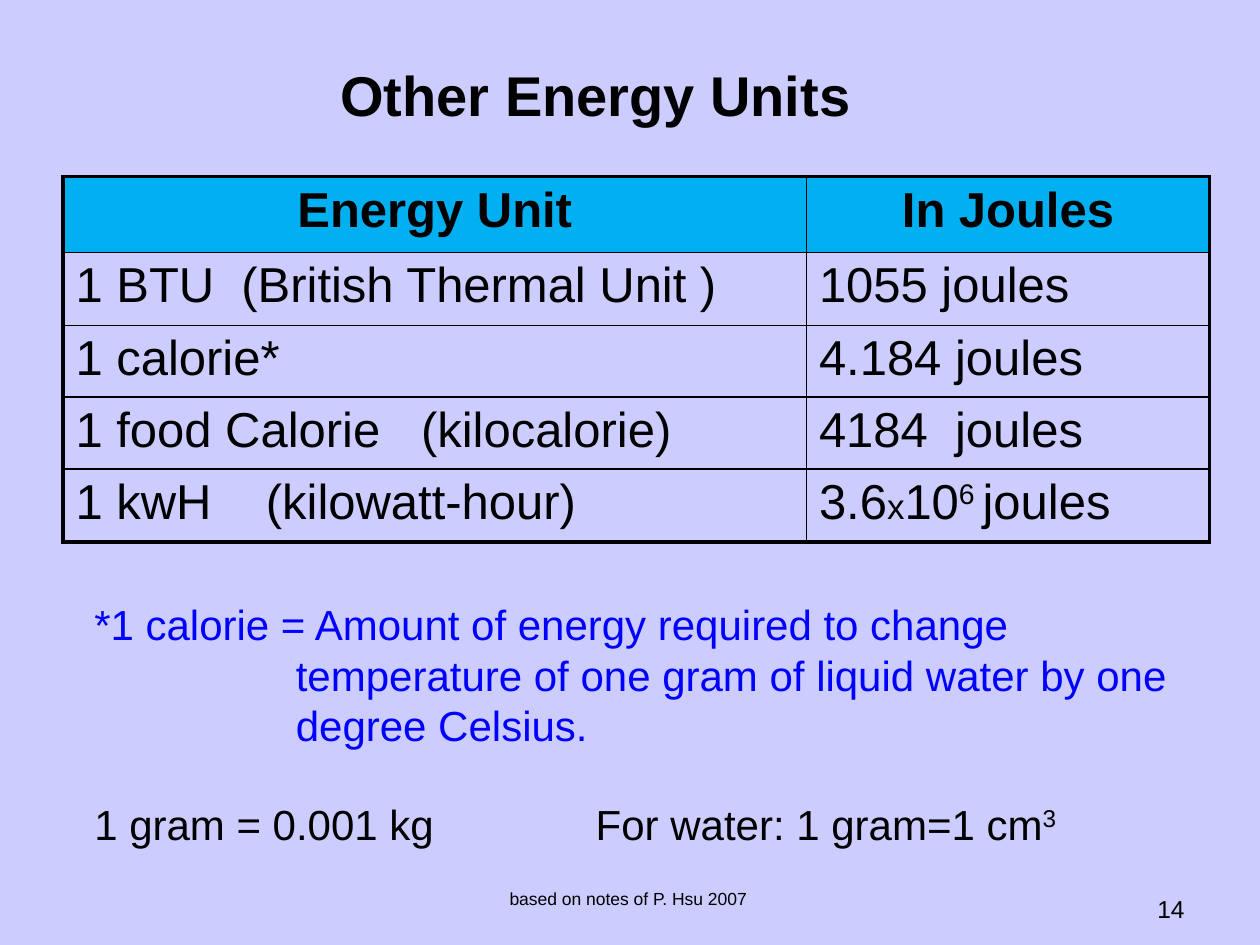
from dataclasses import dataclass

from pptx import Presentation
from pptx.dml.color import RGBColor
from pptx.enum.text import MSO_ANCHOR, MSO_AUTO_SIZE, PP_ALIGN
from pptx.oxml.ns import qn
from pptx.util import Inches, Pt
from lxml.etree import SubElement


@dataclass(frozen=True)
class Theme:
    font: str = "Arial"
    background: str = "CCCCFF"
    header: str = "00B0F0"
    ink: str = "000000"
    note: str = "0000FF"
    title_size: float = 32
    table_size: float = 28
    times_size: float = 20
    note_size: float = 24
    number_size: float = 14
    credit_size: float = 10
    outer_line: float = 2.25
    inner_line: float = 1


@dataclass(frozen=True)
class Box:
    """A place on the slide, in shares of its width and height."""
    left: float
    top: float
    width: float
    height: float

    def lengths(self) -> tuple:
        return (int(WIDTH * self.left), int(HEIGHT * self.top),
                int(WIDTH * self.width), int(HEIGHT * self.height))


@dataclass(frozen=True)
class Span:
    text: str
    size: float = 0
    raised: bool = False


@dataclass(frozen=True)
class Style:
    size: float
    color: str = Theme.ink
    bold: bool = False
    align: PP_ALIGN = PP_ALIGN.LEFT


THEME = Theme()
WIDTH, HEIGHT = Inches(10), Inches(7.5)

TITLE_BOX = Box(0.26, 0.057, 0.547, 0.085)
TABLE_BOX = Box(0.05, 0.187, 0.91, 0.387)
NOTES_BOX = Box(0.065, 0.627, 0.9, 0.283)
CREDIT_BOX = Box(0.34, 0.933, 0.317, 0.05)
NUMBER_BOX = Box(0.717, 0.94, 0.233, 0.04)

COLUMN_WIDTHS = (5.9, 3.2)
ROW_HEIGHTS = (0.6, 0.58, 0.57, 0.57, 0.58)
UNITS = (
    ((Span("Energy Unit"),), (Span("In Joules"),)),
    ((Span("1 BTU  (British Thermal Unit )"),), (Span("1055 joules"),)),
    ((Span("1 calorie*"),), (Span("4.184 joules"),)),
    ((Span("1 food Calorie   (kilocalorie)"),), (Span("4184  joules"),)),
    ((Span("1 kwH    (kilowatt-hour)"),),
     (Span("3.6"), Span("x", THEME.times_size), Span("10"),
      Span("6 ", raised=True), Span("joules"))),
)


def write(paragraph, spans: tuple, style: Style) -> None:
    paragraph.alignment = style.align
    for span in spans:
        run = paragraph.add_run()
        run.text = span.text
        font = run.font
        font.name, font.bold = THEME.font, style.bold
        font.size = Pt(span.size or style.size)
        font.color.rgb = RGBColor.from_string(style.color)
        if span.raised:
            run._r.get_or_add_rPr().set("baseline", "30000")


def add_text_box(slide, box: Box, text: str, style: Style):
    frame = slide.shapes.add_textbox(*box.lengths()).text_frame
    frame.word_wrap = True
    write(frame.paragraphs[0], (Span(text),), style)
    return frame


def set_borders(cell, row: int, column: int) -> None:
    """Draw heavy lines on the table's outside and thin ones within."""
    outside = {"a:lnL": column == 0, "a:lnR": column == len(COLUMN_WIDTHS) - 1,
               "a:lnT": row == 0, "a:lnB": row == len(ROW_HEIGHTS) - 1}
    properties = cell._tc.get_or_add_tcPr()
    for position, (tag, heavy) in enumerate(outside.items()):
        line = SubElement(properties, qn(tag))
        width = THEME.outer_line if heavy else THEME.inner_line
        line.set("w", str(Pt(width)))
        fill = SubElement(line, qn("a:solidFill"))
        SubElement(fill, qn("a:srgbClr")).set("val", THEME.ink)
        properties.insert(position, line)


def add_unit_table(slide) -> None:
    table = slide.shapes.add_table(len(ROW_HEIGHTS), len(COLUMN_WIDTHS),
                                   *TABLE_BOX.lengths()).table
    table.horz_banding = False
    for column, width in zip(table.columns, COLUMN_WIDTHS):
        column.width = Inches(width)
    for row, height in zip(table.rows, ROW_HEIGHTS):
        row.height = Inches(height)
    heading = Style(THEME.table_size, bold=True, align=PP_ALIGN.CENTER)
    body = Style(THEME.table_size)
    for r, unit in enumerate(UNITS):
        for c, spans in enumerate(unit):
            cell = table.cell(r, c)
            if r == 0:
                cell.fill.solid()
                cell.fill.fore_color.rgb = RGBColor.from_string(THEME.header)
            else:
                cell.fill.background()
            set_borders(cell, r, c)
            write(cell.text_frame.paragraphs[0], spans,
                  heading if r == 0 else body)


def add_title(slide) -> None:
    title = slide.shapes.title
    title.left, title.top, title.width, title.height = TITLE_BOX.lengths()
    frame = title.text_frame
    frame.auto_size = MSO_AUTO_SIZE.NONE
    frame.vertical_anchor = MSO_ANCHOR.TOP
    write(frame.paragraphs[0], (Span("Other Energy Units"),),
          Style(THEME.title_size, bold=True))


def add_notes(slide) -> None:
    frame = add_text_box(
        slide, NOTES_BOX,
        "*1 calorie = Amount of energy required to change temperature "
        "of one gram of liquid water by one degree Celsius.",
        Style(THEME.note_size, THEME.note))
    hanging = frame.paragraphs[0]._p.get_or_add_pPr()
    hanging.set("marL", str(Inches(1.6)))
    hanging.set("indent", str(-Inches(1.6)))

    water = frame.add_paragraph()
    water.space_before = Pt(THEME.note_size * 1.15)
    write(water, (Span("1 gram = 0.001 kg\tFor water: 1 gram=1 cm"),
                  Span("3", raised=True)), Style(THEME.note_size))
    stops = SubElement(water._p.get_or_add_pPr(), qn("a:tabLst"))
    stop = SubElement(stops, qn("a:tab"))
    stop.set("pos", str(Inches(3.98)))
    stop.set("algn", "l")


def main() -> None:
    deck = Presentation()
    deck.slide_width, deck.slide_height = WIDTH, HEIGHT
    slide = deck.slides.add_slide(deck.slide_layouts.get_by_name("Title Only"))
    slide.background.fill.solid()
    slide.background.fill.fore_color.rgb = RGBColor.from_string(THEME.background)
    add_title(slide)
    add_unit_table(slide)
    add_notes(slide)
    add_text_box(slide, CREDIT_BOX, "based on notes of P. Hsu 2007",
                 Style(THEME.credit_size, align=PP_ALIGN.CENTER))
    add_text_box(slide, NUMBER_BOX, "14",
                 Style(THEME.number_size, align=PP_ALIGN.RIGHT))
    deck.save("out.pptx")


if __name__ == "__main__":
    main()
